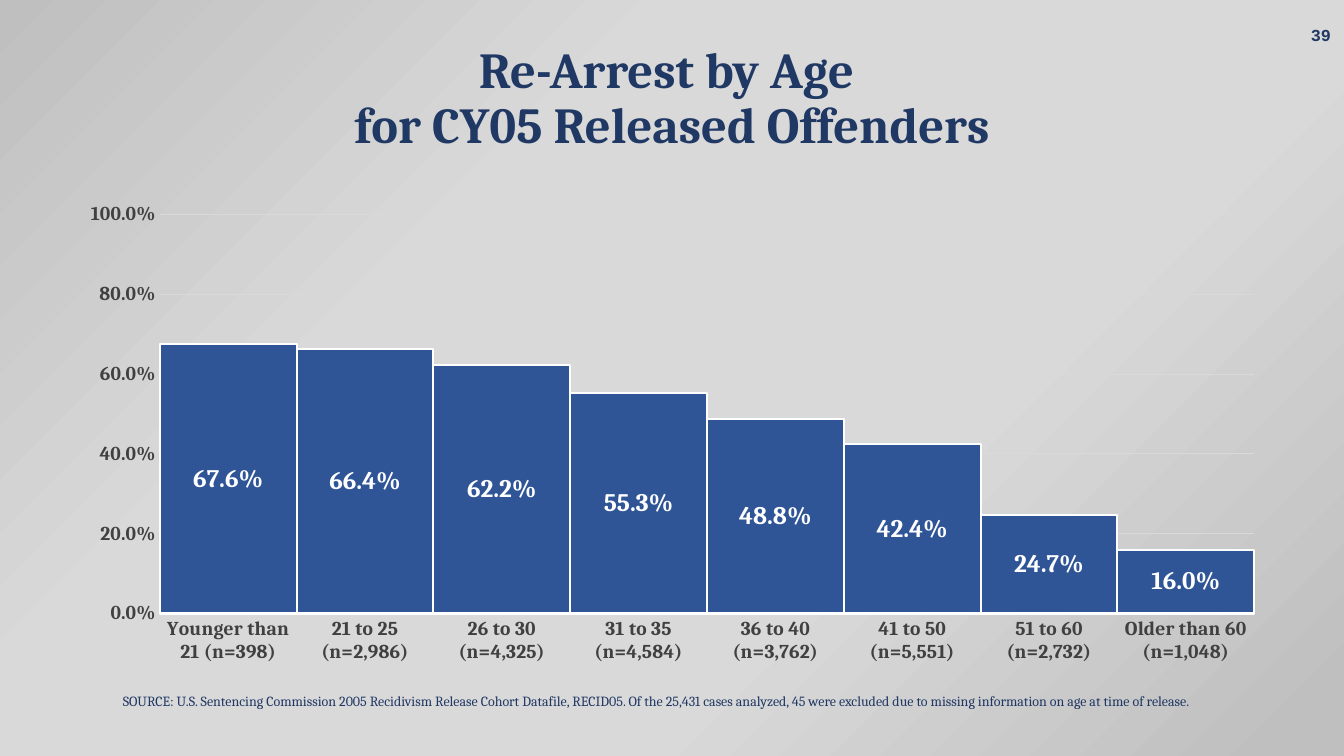
import pptx
import pptx.chart.data
import pptx.dml.color
import pptx.enum.chart
import pptx.enum.dml
import pptx.enum.text
import pptx.oxml
import pptx.oxml.ns
import pptx.util
from dataclasses import dataclass

Inches, Pt = pptx.util.Inches, pptx.util.Pt
RGB = pptx.dml.color.RGBColor.from_string
ALIGN = pptx.enum.text.PP_ALIGN
ANCHOR = pptx.enum.text.MSO_ANCHOR


@dataclass(frozen=True)
class Theme:
    face: str = "Cambria"
    number_face: str = "Courier New"
    navy: str = "203864"
    bar: str = "2F5597"
    white: str = "FFFFFF"
    axis_text: str = "404040"
    light: str = "D9D9D9"
    dark: str = "BFBFBF"
    title_size: int = 36
    value_size: int = 18
    axis_size: int = 14
    number_size: int = 12
    source_size: int = 10


theme = Theme()


def style_font(font, size, color, bold=True, face=theme.face):
    font.name, font.size, font.bold = face, Pt(size), bold
    font.color.rgb = RGB(color)


def add_text(text, box, size, align, anchor, spacing=None, bold=True, face=theme.face):
    """Add a one-paragraph navy text box at box (left, top, width, height)."""
    frame = slide.shapes.add_textbox(*map(Inches, box)).text_frame
    frame.word_wrap = True
    frame.vertical_anchor = anchor
    paragraph = frame.paragraphs[0]
    paragraph.text = text
    paragraph.alignment = align
    paragraph.line_spacing = spacing
    style_font(paragraph.font, size, theme.navy, bold, face)


deck = pptx.Presentation()
deck.slide_width, deck.slide_height = Inches(13.33), Inches(7.5)
slide = deck.slides.add_slide(deck.slide_layouts[6])

# Diagonal grey background with darker corners
backdrop = slide.background.fill
backdrop.gradient()
backdrop.gradient_angle = 315
stops = slide.background._cSld.find(".//" + pptx.oxml.ns.qn("a:gsLst"))
for stop in list(stops):
    stops.remove(stop)
for percent, color in ((0, theme.dark), (33, theme.light), (66, theme.light), (97, theme.dark)):
    stops.append(pptx.oxml.parse_xml(
        f'<a:gs {pptx.oxml.ns.nsdecls("a")} pos="{percent * 1000}">'
        f'<a:srgbClr val="{color}"/></a:gs>'))

add_text("39", (10.3, 0.15, 3, 0.4), theme.number_size, ALIGN.RIGHT, ANCHOR.MIDDLE,
         face=theme.number_face)

# Re-arrest rate by age group
rates = {
    "Younger than 21 (n=398)": 0.676,
    "21 to 25 (n=2,986)": 0.664,
    "26 to 30 (n=4,325)": 0.622,
    "31 to 35 (n=4,584)": 0.553,
    "36 to 40 (n=3,762)": 0.488,
    "41 to 50 (n=5,551)": 0.424,
    "51 to 60\n(n=2,732)": 0.247,
    "Older than 60\n(n=1,048)": 0.16,
}
rate_data = pptx.chart.data.CategoryChartData(number_format="0.0%")
rate_data.categories = list(rates)
rate_data.add_series("Series 1", list(rates.values()))
chart = slide.shapes.add_chart(
    pptx.enum.chart.XL_CHART_TYPE.COLUMN_CLUSTERED,
    Inches(0.66), Inches(1.92), Inches(12.02), Inches(4.76), rate_data).chart
chart.has_legend = False
chart.has_title = False
style_font(chart.font, theme.axis_size, theme.axis_text)

for axis in (chart.category_axis, chart.value_axis):
    axis.major_tick_mark = pptx.enum.chart.XL_TICK_MARK.NONE
    style_font(axis.tick_labels.font, theme.axis_size, theme.axis_text)

rate_axis = chart.value_axis
rate_axis.minimum_scale, rate_axis.maximum_scale, rate_axis.major_unit = 0, 1, 0.2
rate_axis.tick_labels.number_format = "0.0%"
rate_axis.tick_labels.number_format_is_linked = False
rate_axis.format.line.fill.background()
rate_axis.has_major_gridlines = True
for line in (chart.category_axis.format.line, rate_axis.major_gridlines.format.line):
    line.color.rgb = RGB(theme.light)
    line.width = Pt(0.75)

plot = chart.plots[0]
plot.gap_width = 0
plot.vary_by_categories = False
bars = plot.series[0]
bars.format.fill.solid()
bars.format.fill.fore_color.rgb = RGB(theme.bar)
bars.format.line.color.rgb = RGB(theme.white)
bars.format.line.width = Pt(1.5)
bar_labels = bars.data_labels
bar_labels.show_value = True
bar_labels.number_format = "0.0%"
bar_labels.number_format_is_linked = False
bar_labels.position = pptx.enum.chart.XL_LABEL_POSITION.CENTER
style_font(bar_labels.font, theme.value_size, theme.white)

add_text("Re-Arrest by Age \vfor CY05 Released Offenders", (0, 0.4, 13.33, 1.32),
         theme.title_size, ALIGN.CENTER, ANCHOR.TOP, spacing=0.9)
add_text("SOURCE: U.S. Sentencing Commission 2005 Recidivism Release Cohort Datafile, RECID05. "
         "Of the 25,431 cases analyzed, 45 were excluded due to missing information on age "
         "at time of release.", (1.12, 6.84, 11.1, 0.75),
         theme.source_size, ALIGN.LEFT, ANCHOR.TOP, spacing=0.9, bold=False)

deck.save("out.pptx")
